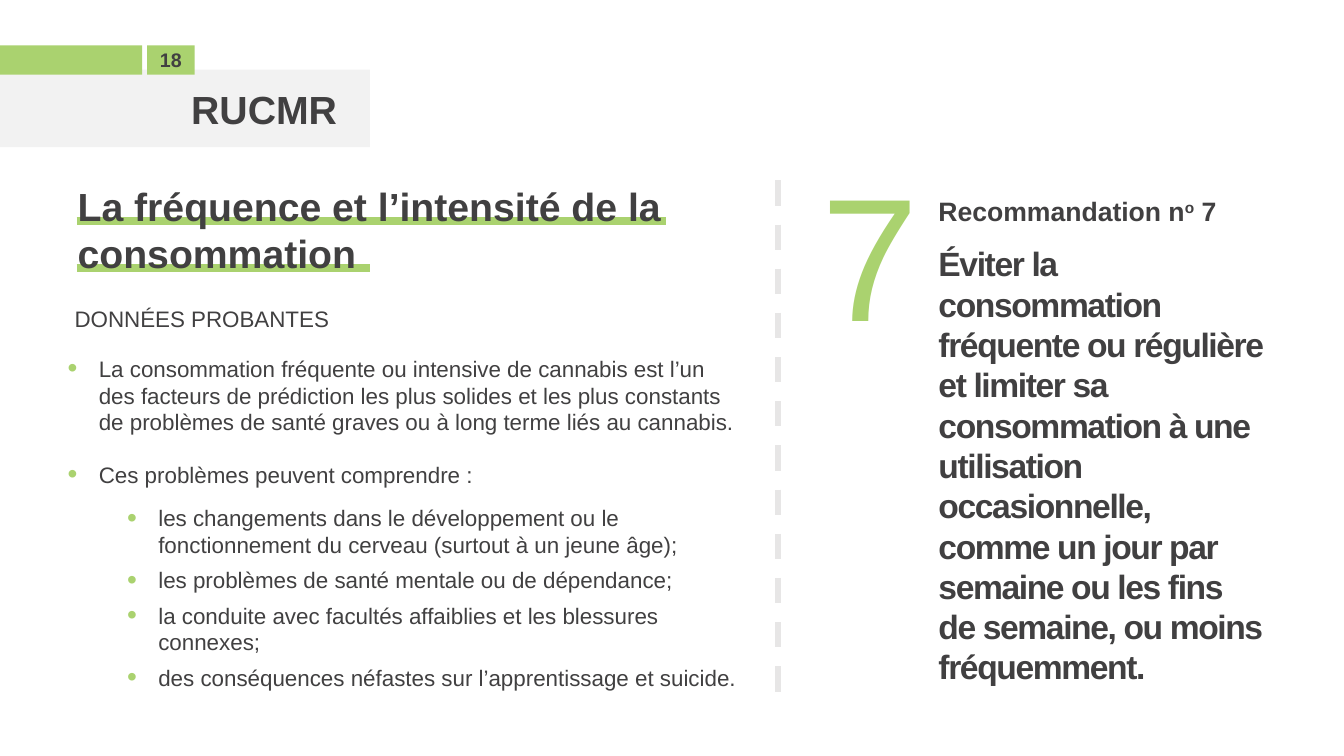
import pptx
import pptx.util
import pptx.dml.color
import pptx.enum.dml
import pptx.enum.shapes
import pptx.enum.text
import pptx.oxml.ns
import lxml.etree

Inches = pptx.util.Inches
Pt = pptx.util.Pt
Align = pptx.enum.text.PP_ALIGN
Anchor = pptx.enum.text.MSO_ANCHOR

COLORS = {"text": "414041", "green": "AAD26F", "pale": "F2F2F2", "rule": "E7E6E6"}

POINTS = [  # text, level, space before
    ("La consommation fréquente ou intensive de cannabis est l’un des facteurs de "
     "prédiction les plus solides et les plus constants de problèmes de santé graves "
     "ou à long terme liés au cannabis.", 0, 18),
    ("Ces problèmes peuvent comprendre :", 0, 18),
    ("les changements dans le développement ou le fonctionnement du cerveau "
     "(surtout à un jeune âge);", 1, 12),
    ("les problèmes de santé mentale ou de dépendance;", 1, 6),
    ("la conduite avec facultés affaiblies et les blessures connexes;", 1, 6),
    ("des conséquences néfastes sur l’apprentissage et suicide.", 1, 6),
]
ADVICE = ("Éviter la consommation fréquente ou régulière et limiter sa consommation "
          "à une utilisation occasionnelle, comme un jour par semaine ou les fins de "
          "semaine, ou moins fréquemment.")


def color(name):
    return pptx.dml.color.RGBColor.from_string(COLORS[name])


def add_tag(parent, tag, **attrs):
    return lxml.etree.SubElement(parent, pptx.oxml.ns.qn(tag), attrs)


class Page:
    font = "Arial"
    lead = 1.2  # line height in ems

    def __init__(self, slide):
        self.slide = slide
        self.shapes = slide.shapes

    def bar(self, left, top, width, height, fill):
        box = self.shapes.add_shape(
            pptx.enum.shapes.MSO_SHAPE.RECTANGLE,
            Inches(left), Inches(top), Inches(width), Inches(height))
        box.shadow.inherit = False
        box.fill.solid()
        box.fill.fore_color.rgb = color(fill)
        box.line.fill.background()

    def line(self, x1, y1, x2, y2, ink, width, dash=None):
        rule = self.shapes.add_connector(
            pptx.enum.shapes.MSO_CONNECTOR.STRAIGHT,
            Inches(x1), Inches(y1), Inches(x2), Inches(y2))
        rule.line.color.rgb = color(ink)
        rule.line.width = Pt(width)
        if dash:
            rule.line.dash_style = dash
        add_tag(rule.element.spPr, "a:effectLst")

    def frame(self, shape, anchor=Anchor.TOP, inset=True):
        frame = shape.text_frame
        frame.word_wrap = True
        frame.auto_size = pptx.enum.text.MSO_AUTO_SIZE.NONE
        frame.vertical_anchor = anchor
        frame.margin_left = frame.margin_right = Inches(0.1 if inset else 0)
        frame.margin_top = frame.margin_bottom = Inches(0.05 if inset else 0)
        return frame

    def box(self, left, top, width, height, **look):
        return self.frame(self.shapes.add_textbox(
            Inches(left), Inches(top), Inches(width), Inches(height)), **look)

    def holder(self, shape, left, top, width, height, **look):
        shape.left, shape.top = Inches(left), Inches(top)
        shape.width, shape.height = Inches(width), Inches(height)
        shape.element.getparent().append(shape.element)  # bring to front
        return self.frame(shape, **look)

    def style(self, para, size, bold=False, ink="text", align=Align.LEFT, before=0):
        para.alignment = align
        para.line_spacing = Pt(size * self.lead)
        para.space_before = Pt(before)
        para.font.name = self.font
        para.font.size = Pt(size)
        para.font.bold = bold
        para.font.color.rgb = color(ink)

    def label(self, frame, text, size, **look):
        para = frame.paragraphs[0]
        para.text = text
        self.style(para, size, **look)

    def bullets(self, frame, points, size):
        for i, (text, level, before) in enumerate(points):
            para = frame.paragraphs[0] if i == 0 else frame.add_paragraph()
            para.text = text
            para.level = level
            props = para._p.get_or_add_pPr()
            props.set("marL", str(Inches((0.31, 0.9)[level])))
            props.set("indent", str(Inches(-0.31)))
            add_tag(add_tag(props, "a:buClr"), "a:srgbClr", val=COLORS["green"])
            add_tag(props, "a:buSzPct", val="125000")
            add_tag(props, "a:buFont", typeface=self.font)
            add_tag(props, "a:buChar", char="•")
            self.style(para, size, before=before)


def main():
    deck = pptx.Presentation()
    deck.slide_width, deck.slide_height = Inches(13.33), Inches(7.5)
    page = Page(deck.slides.add_slide(deck.slide_layouts[1]))

    # Header band and page number
    page.bar(0, 0.69, 3.67, 0.77, "pale")
    page.label(page.box(0.22, 0.79, 3.22, 0.57, anchor=Anchor.MIDDLE),
               "RUCMR", 28, bold=True, align=Align.RIGHT)
    for left, width in ((0, 1.41), (1.46, 0.47)):
        page.bar(left, 0.45, width, 0.29, "green")
    page.label(page.box(1.46, 0.43, 0.47, 0.34), "18", 14, bold=True, align=Align.CENTER)

    # Underlined title
    for right, y in ((6.61, 2.19), (3.67, 2.66)):
        page.line(0.76, y, right, y, "green", 6)
    title = page.holder(page.shapes.title, 0.67, 1.76, 6.15, 1.04)
    page.label(title, "La fréquence et l’intensité de la consommation", 28, bold=True)

    # Evidence list
    page.label(page.box(0.74, 3.03, 5.49, 0.27, inset=False), "DONNÉES PROBANTES", 16)
    body = page.holder(page.slide.placeholders[1], 0.67, 3.52, 6.66, 3.7, inset=False)
    page.bullets(body, POINTS, 16)

    # Divider
    page.line(7.72, 1.79, 7.72, 6.95, "rule", 4.5, pptx.enum.dml.MSO_LINE.DASH)

    # Recommendation
    page.label(page.box(8.05, 1.4, 1.55, 2.2), "7", 125, ink="green")
    panel = page.box(9.21, 1.76, 3.44, 5.06, anchor=Anchor.MIDDLE)
    head = panel.paragraphs[0]
    for text, raised in (("Recommandation n", 0), ("o", 30000), (" 7", 0)):
        run = head.add_run()
        run.text = text
        if raised:
            run._r.get_or_add_rPr().set("baseline", str(raised))
    page.style(head, 19, bold=True)
    head.line_spacing = Pt(34.5)
    advice = panel.add_paragraph()
    run = advice.add_run()
    run.text = ADVICE
    run._r.get_or_add_rPr().set("spc", "-100")
    page.style(advice, 24, bold=True, before=12)

    deck.save("out.pptx")


if __name__ == "__main__":
    main()
